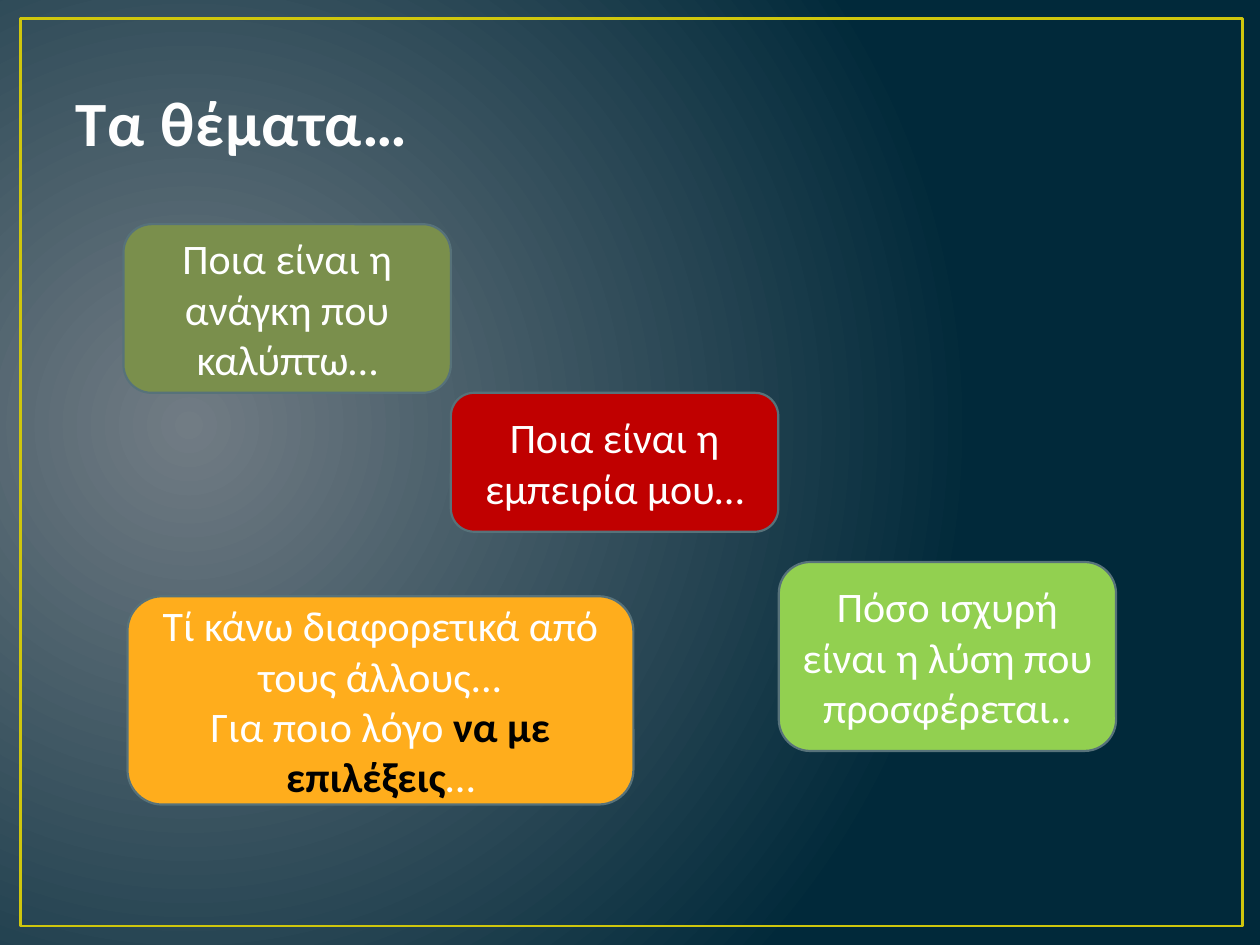
import lxml.etree
import pptx
import pptx.dml.color
import pptx.enum.shapes
import pptx.enum.text
import pptx.oxml.ns
import pptx.util
from pptx.util import Cm

# Content
COLORS = {
    "glow": "717C84", "night": "01293A", "frame": "CFC60D", "title": "FEFEFE",
    "edge": "57727A", "white": "FFFFFF", "black": "000000",
    "olive": "7A8F4C", "red": "C00000", "green": "92D050", "orange": "FFAD1C",
}
TITLE = "Τα θέματα…"
NORMAL = {"name": "Calibri", "size": pptx.util.Pt(24), "bold": False}
STRONG = {**NORMAL, "bold": True}
HEADING = {**STRONG, "size": pptx.util.Pt(36)}

# Topic cards: fill, (left, top, width, height) in cm, paragraphs of (text, is strong)
CARDS = [
    ("olive", (2.49, 4.52, 6.6, 3.4), [[("Ποια είναι η ανάγκη που καλύπτω…", False)]]),
    ("red", (9.09, 7.92, 6.6, 2.8), [[("Ποια είναι η εμπειρία μου…", False)]]),
    ("green", (15.7, 11.33, 6.8, 3.81),
     [[("Πόσο ισχυρή είναι η λύση που προσφέρεται..", False)]]),
    ("orange", (2.57, 12.02, 10.2, 4.2), [
        [("Τί κάνω διαφορετικά από τους άλλους...", False)],
        [("Για ποιο λόγο ", False), ("να με επιλέξεις", True), ("…", False)],
    ]),
]


def rgb(name):
    return pptx.dml.color.RGBColor.from_string(COLORS[name])


def add_run(paragraph, text, color, formats):
    run = paragraph.add_run()
    run.text = text
    for key, value in formats.items():
        setattr(run.font, key, value)
    run.font.color.rgb = rgb(color)
    return run


def add_box(slide, kind, box, line_color, line_width):
    shape = slide.shapes.add_shape(kind, *map(Cm, box))
    shape.shadow.inherit = False
    shape.line.color.rgb = rgb(line_color)
    shape.line.width = pptx.util.Pt(line_width)
    return shape


def set_radial_background(slide):
    fill = slide.background.fill
    fill.gradient()
    for stop, color in zip(fill.gradient_stops, ("glow", "night")):
        stop.color.rgb = rgb(color)
    # A circular path replaces the linear direction
    qn = pptx.oxml.ns.qn
    linear = next(slide.element.iter(qn("a:lin")))
    circle = lxml.etree.Element(qn("a:path"), {"path": "circle"})
    lxml.etree.SubElement(circle, qn("a:fillToRect"),
                          {"l": "15000", "t": "50000", "r": "85000", "b": "60000"})
    linear.getparent().replace(linear, circle)


def main():
    presentation = pptx.Presentation()
    presentation.slide_width, presentation.slide_height = Cm(25.4), Cm(19.05)
    slide = presentation.slides.add_slide(presentation.slide_layouts[5])
    set_radial_background(slide)

    # Frame
    shapes = pptx.enum.shapes.MSO_SHAPE
    frame = add_box(slide, shapes.RECTANGLE, (0.41, 0.38, 24.64, 18.29), "frame", 1.5)
    frame.fill.background()

    # Title
    title = slide.shapes.title
    title.left, title.top, title.width, title.height = map(Cm, (1.27, 0.76, 22.86, 2.57))
    title.text_frame.vertical_anchor = pptx.enum.text.MSO_ANCHOR.BOTTOM
    paragraph = title.text_frame.paragraphs[0]
    paragraph.alignment = pptx.enum.text.PP_ALIGN.LEFT
    run = add_run(paragraph, TITLE, "title", HEADING)
    run.font._element.set("spc", "50")

    # Topic cards
    for fill, box, paragraphs in CARDS:
        card = add_box(slide, shapes.ROUNDED_RECTANGLE, box, "edge", 1.25)
        card.fill.solid()
        card.fill.fore_color.rgb = rgb(fill)
        frame_text = card.text_frame
        frame_text.word_wrap = True
        frame_text.vertical_anchor = pptx.enum.text.MSO_ANCHOR.MIDDLE
        for index, runs in enumerate(paragraphs):
            paragraph = frame_text.add_paragraph() if index else frame_text.paragraphs[0]
            paragraph.alignment = pptx.enum.text.PP_ALIGN.CENTER
            for text, strong in runs:
                add_run(paragraph, text, "black" if strong else "white",
                        STRONG if strong else NORMAL)

    presentation.save("out.pptx")


if __name__ == "__main__":
    main()
